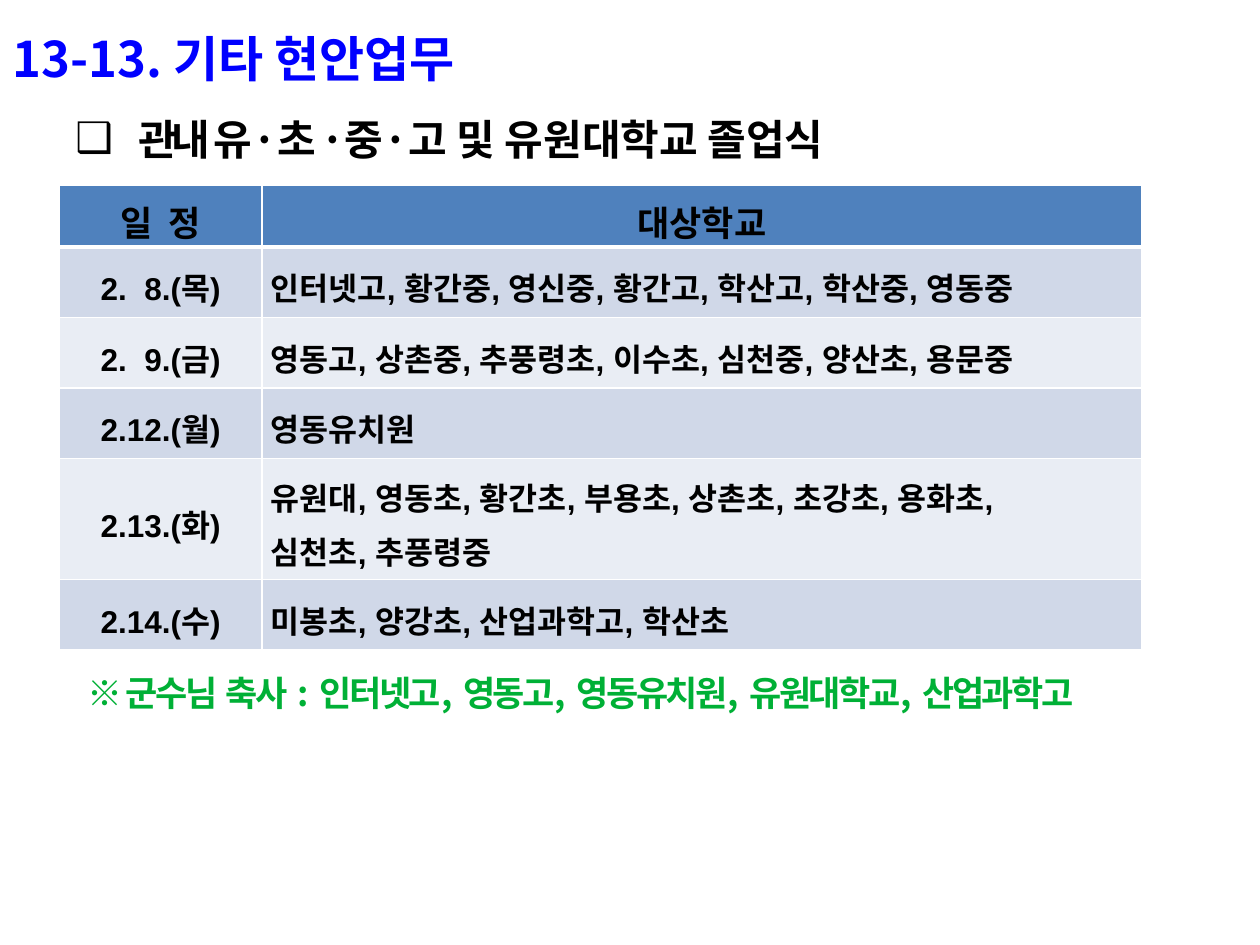
from pptx import Presentation
from pptx.dml.color import RGBColor
from pptx.enum.text import MSO_ANCHOR, PP_ALIGN
from pptx.oxml.ns import qn
from pptx.util import Inches, Pt
from lxml import etree

TOP, MIDDLE = MSO_ANCHOR.TOP, MSO_ANCHOR.MIDDLE
LEFT, CENTER, JUSTIFY = PP_ALIGN.LEFT, PP_ALIGN.CENTER, PP_ALIGN.JUSTIFY

THEME = {
    "korean": "Noto Sans CJK KR", "latin": "Arial",
    "title": "0000FF", "text": "000000", "note": "00B036",
    "header": "4F81BD", "bands": ("D0D8E8", "E9EDF4"), "border": "FFFFFF",
    "title_size": 28, "heading_size": 24, "header_size": 20,
    "cell_size": 18, "note_size": 20,
}

TITLE = "13-13. 기타 현안업무"
# Each run is its text and its letter spacing in points
HEADING = [("관내  유", -3), ("·", 0), ("초 ", -3), ("·중·고 및 유원대학교 졸업식", 0)]
NOTE = [("※ 군수님  축사  :  인터넷고,  영동고,  영동유치원,  유원대학교,  산업과학고", -1.5)]
HEADER = ["일  정", "대상학교"]
CEREMONIES = [
    ("2.  8.(목)", ["인터넷고, 황간중, 영신중, 황간고, 학산고, 학산중, 영동중"]),
    ("2.  9.(금)", ["영동고, 상촌중, 추풍령초, 이수초, 심천중, 양산초, 용문중"]),
    ("2.12.(월)", ["영동유치원"]),
    ("2.13.(화)", ["유원대, 영동초, 황간초, 부용초, 상촌초, 초강초, 용화초,", "심천초, 추풍령중"]),
    ("2.14.(수)", ["미봉초, 양강초, 산업과학고, 학산초"]),
]
COLUMN_WIDTHS = (1.61, 6.98)
HEADER_HEIGHT, LINE_HEIGHT, ROW_PADDING = 0.49, 0.4, 0.16


def write_paragraph(paragraph, runs, *, size, color, latin=THEME["korean"],
                    align=LEFT, line_spacing=1.0):
    paragraph.alignment = align
    paragraph.line_spacing = line_spacing
    for text, letter_spacing in runs:
        run = paragraph.add_run()
        run.text = text
        font = run.font
        font.name, font.size, font.bold = latin, Pt(size), True
        font.color.rgb = RGBColor.from_string(color)
        properties = run._r.get_or_add_rPr()
        properties.set("spc", str(int(letter_spacing * 100)))
        east_asian = etree.Element(qn("a:ea"), typeface=THEME["korean"])
        properties.find(qn("a:latin")).addnext(east_asian)


def place(shape, left, top, width, height):
    shape.left, shape.top = Inches(left), Inches(top)
    shape.width, shape.height = Inches(width), Inches(height)
    frame = shape.text_frame
    frame.word_wrap = True
    frame.vertical_anchor = TOP
    return frame.paragraphs[0]


def add_bullet(paragraph, character, text_indent, hanging):
    properties = paragraph._p.get_or_add_pPr()
    properties.set("marL", str(Inches(text_indent)))
    properties.set("indent", str(-Inches(hanging)))
    color = etree.SubElement(properties, qn("a:buClr"))
    etree.SubElement(color, qn("a:srgbClr"), val=THEME["text"])
    etree.SubElement(properties, qn("a:buFont"), typeface=THEME["latin"])
    etree.SubElement(properties, qn("a:buChar"), char=character)


def set_borders(cell, bottom_width):
    properties = cell._tc.get_or_add_tcPr()
    widths = {"a:lnL": 1, "a:lnR": 1, "a:lnT": 1, "a:lnB": bottom_width}
    for position, (tag, width) in enumerate(widths.items()):
        line = etree.Element(qn(tag), w=str(Pt(width)))
        fill = etree.SubElement(line, qn("a:solidFill"))
        etree.SubElement(fill, qn("a:srgbClr"), val=THEME["border"])
        properties.insert(position, line)


def fill_cell(cell, lines, *, fill, size, align, anchor, margins, line_spacing, bottom_width=1):
    cell.fill.solid()
    cell.fill.fore_color.rgb = RGBColor.from_string(fill)
    cell.vertical_anchor = anchor
    side, top, bottom = margins
    cell.margin_left = cell.margin_right = Inches(side)
    cell.margin_top, cell.margin_bottom = Inches(top), Inches(bottom)
    frame = cell.text_frame
    for number, line in enumerate(lines):
        paragraph = frame.add_paragraph() if number else frame.paragraphs[0]
        write_paragraph(paragraph, [(line, 0)], size=size, color=THEME["text"],
                        latin=THEME["latin"], align=align, line_spacing=line_spacing)
    set_borders(cell, bottom_width)


def add_schedule(slide, left, top):
    heights = [HEADER_HEIGHT] + [LINE_HEIGHT * len(schools) + ROW_PADDING
                                 for _, schools in CEREMONIES]
    table = slide.shapes.add_table(
        len(heights), len(COLUMN_WIDTHS), Inches(left), Inches(top),
        Inches(sum(COLUMN_WIDTHS)), Inches(sum(heights))).table
    for column, width in zip(table.columns, COLUMN_WIDTHS):
        column.width = Inches(width)
    for row, height in zip(table.rows, heights):
        row.height = Inches(height)
    for column, label in enumerate(HEADER):
        fill_cell(table.cell(0, column), [label], fill=THEME["header"],
                  size=THEME["header_size"], align=CENTER, anchor=TOP,
                  margins=(0.1, 0.08, 0), line_spacing=1.0, bottom_width=3)
    for row, (date, schools) in enumerate(CEREMONIES, start=1):
        band = THEME["bands"][(row - 1) % 2]
        for column, (lines, align) in enumerate([([date], CENTER), (schools, JUSTIFY)]):
            fill_cell(table.cell(row, column), lines, fill=band,
                      size=THEME["cell_size"], align=align, anchor=MIDDLE,
                      margins=(0.07, 0.02, 0.02), line_spacing=1.2,
                      bottom_width=1)


def main():
    presentation = Presentation()
    presentation.slide_width, presentation.slide_height = Inches(10), Inches(7.5)
    slide = presentation.slides.add_slide(presentation.slide_layouts[5])

    title = place(slide.shapes.title, 0, 0.18, 9.73, 0.66)
    write_paragraph(title, [(TITLE, 0)], size=THEME["title_size"], color=THEME["title"])

    heading = place(slide.shapes.add_textbox(0, 0, 0, 0), 0, 0.85, 9.73, 0.58)
    write_paragraph(heading, HEADING, size=THEME["heading_size"], color=THEME["text"])
    add_bullet(heading, "❑", 1, 0.5)

    add_schedule(slide, 0.47, 1.47)

    note = place(slide.shapes.add_textbox(0, 0, 0, 0), 0.6, 5.28, 9.13, 0.5)
    write_paragraph(note, NOTE, size=THEME["note_size"], color=THEME["note"])

    presentation.save("out.pptx")


if __name__ == "__main__":
    main()
